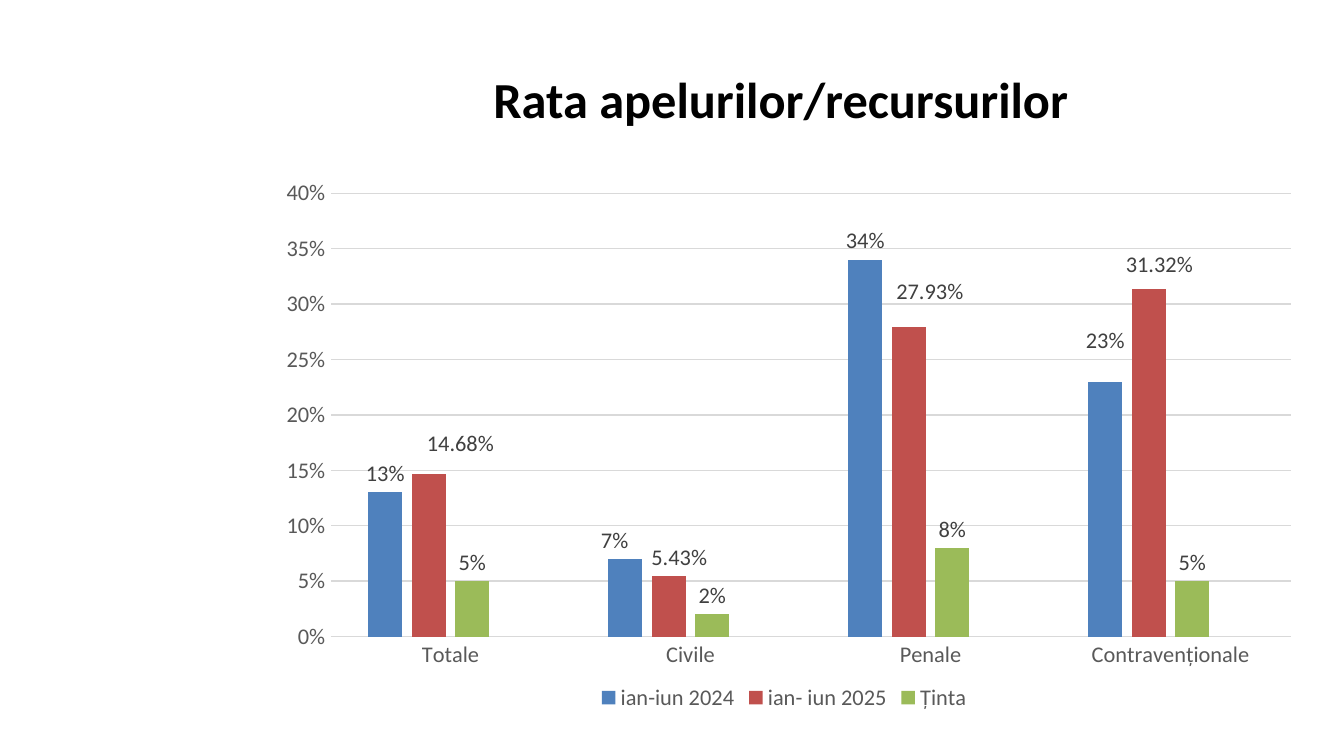
from lxml.etree import SubElement
from pptx import Presentation
from pptx.chart.data import CategoryChartData
from pptx.dml.color import RGBColor
from pptx.enum.chart import XL_CHART_TYPE as ChartType, XL_LABEL_POSITION as LabelPos
from pptx.enum.chart import XL_LEGEND_POSITION as LegendPos, XL_TICK_MARK as Tick
from pptx.enum.text import MSO_ANCHOR as Anchor, PP_ALIGN as Align
from pptx.oxml import parse_xml
from pptx.oxml.ns import nsdecls, qn
from pptx.util import Inches, Pt

COLOURS = {
    "title": "000000", "axis": "595959", "label": "404040", "grid": "D9D9D9",
    "previous": "4F81BD", "current": "C0504D", "target": "9BBB59", "spare": "8064A2",
}
CATEGORIES = ["Totale", "Civile", "Penale", "Contravenționale"]
SERIES = [
    ("ian-iun 2024", [0.13, 0.07, 0.34, 0.23], "previous", "0%",
     {1: (-0.01, 0), 3: (0, -0.04)}),
    ("ian- iun 2025", [0.1468, 0.0543, 0.2793, 0.3132], "current", "0.00%",
     {0: (0.03, -0.02), 1: (0.01, 0), 2: (0.02, -0.03), 3: (0.01, -0.01)}),
    ("Ținta", [0.05, 0.02, 0.08, 0.05], "target", "0%", {}),
    ("Series 4", [None] * 4, "spare", "0%", {}),
]
NO_LEADER_LINES = (
    f'<c:extLst {nsdecls("c")}><c:ext uri="{{CE6537A1-D6FC-4f65-9D91-7224C49458BB}}" '
    'xmlns:c15="http://schemas.microsoft.com/office/drawing/2012/chart">'
    '<c15:showLeaderLines val="0"/></c:ext></c:extLst>'
)


class SlideBuilder:
    """Holds the style and the current slide, and adds elements to it."""

    def __init__(self, slide, font_name="Calibri"):
        self.slide = slide
        self.font_name = font_name

    def colour(self, key):
        return RGBColor.from_string(COLOURS[key])

    def style(self, font, size, colour, bold=False):
        formats = {"name": self.font_name, "size": Pt(size), "bold": bold}
        for attribute, value in formats.items():
            setattr(font, attribute, value)
        font.color.rgb = self.colour(colour)

    def rule(self, line):
        line.width = Pt(0.75)
        line.color.rgb = self.colour("grid")

    def layout(self, parent, index, **values):
        for stale in parent.findall(qn("c:layout")):
            parent.remove(stale)
        layout = SubElement(parent, qn("c:layout"))
        manual = SubElement(layout, qn("c:manualLayout"))
        for tag, value in values.items():
            SubElement(manual, qn(f"c:{tag}")).set("val", str(value))
        parent.insert(index, layout)

    def title(self, text, *box):
        frame = self.slide.shapes.add_textbox(*map(Inches, box)).text_frame
        frame.word_wrap = True
        frame.vertical_anchor = Anchor.MIDDLE
        heading = frame.paragraphs[0]
        heading.text = text
        heading.alignment = Align.CENTER
        self.style(heading.runs[0].font, 27, "title", bold=True)

    def labels(self, series, number_format, offsets):
        labels = series.data_labels
        formats = {"show_value": True, "position": LabelPos.OUTSIDE_END,
                   "number_format": number_format, "number_format_is_linked": False}
        for attribute, value in formats.items():
            setattr(labels, attribute, value)
        self.style(labels.font, 12, "label")
        for index, (x, y) in offsets.items():
            label = series.points[index].data_label
            self.style(label.font, 12, "label")
            label.position = LabelPos.OUTSIDE_END
            element = series._element.xpath(f"c:dLbls/c:dLbl[c:idx/@val='{index}']")[0]
            self.layout(element, 1, x=x, y=y)
            number = SubElement(element, qn("c:numFmt"))
            number.set("formatCode", number_format)
            number.set("sourceLinked", "0")
            element.insert(2, number)
        group = series._element.find(qn("c:dLbls"))
        for leader in group.findall(qn("c:showLeaderLines")):
            leader.set("val", "0")
        group.append(parse_xml(NO_LEADER_LINES))

    def axes(self, chart):
        for axis in (chart.category_axis, chart.value_axis):
            axis.major_tick_mark = axis.minor_tick_mark = Tick.NONE
            self.style(axis.tick_labels.font, 12, "axis")
        self.rule(chart.category_axis.format.line)
        rates = chart.value_axis
        formats = {"minimum_scale": 0, "maximum_scale": 0.4, "major_unit": 0.05,
                   "has_major_gridlines": True}
        for attribute, value in formats.items():
            setattr(rates, attribute, value)
        rates.tick_labels.number_format = "0%"
        rates.tick_labels.number_format_is_linked = False
        rates.format.line.fill.background()
        self.rule(rates.major_gridlines.format.line)

    def legend(self, chart, hidden_index):
        chart.has_legend = True
        legend = chart.legend
        legend.position = LegendPos.BOTTOM
        legend.include_in_layout = False
        self.style(legend.font, 12, "axis")
        entry = SubElement(legend._element, qn("c:legendEntry"))
        SubElement(entry, qn("c:idx")).set("val", str(hidden_index))
        SubElement(entry, qn("c:delete")).set("val", "1")
        legend._element.insert(1, entry)

    def column_chart(self, categories, series_rows, *box):
        rates = CategoryChartData(number_format="0.00%")
        rates.categories = categories
        for name, values, *_ in series_rows:
            rates.add_series(name, values)
        chart = self.slide.shapes.add_chart(
            ChartType.COLUMN_CLUSTERED, *map(Inches, box), rates).chart
        chart.has_title = False
        self.style(chart.font, 10, "title")
        columns = chart.plots[0]
        formats = {"gap_width": 219, "overlap": -27, "vary_by_categories": False}
        for attribute, value in formats.items():
            setattr(columns, attribute, value)
        for series, (_, _, colour, number_format, offsets) in zip(columns.series, series_rows):
            series.format.fill.solid()
            series.format.fill.fore_color.rgb = self.colour(colour)
            self.labels(series, number_format, offsets)
        self.axes(chart)
        self.legend(chart, len(series_rows) - 1)
        plot_area = chart._chartSpace.find(f".//{qn('c:plotArea')}")
        self.layout(plot_area, 0, layoutTarget="inner", xMode="edge", yMode="edge",
                    x=0.07, y=0.08, w=0.91, h=0.78)


def main():
    presentation = Presentation()
    presentation.slide_width = Inches(10)
    presentation.slide_height = presentation.slide_width * 9 // 16
    builder = SlideBuilder(presentation.slides.add_slide(presentation.slide_layouts[6]))
    builder.title("Rata apelurilor/recursurilor", 2.25, 0.49, 7.12, 0.48)
    builder.column_chart(CATEGORIES, SERIES, 1.91, 1.1, 7.85, 4.23)
    presentation.save("out.pptx")


if __name__ == "__main__":
    main()
